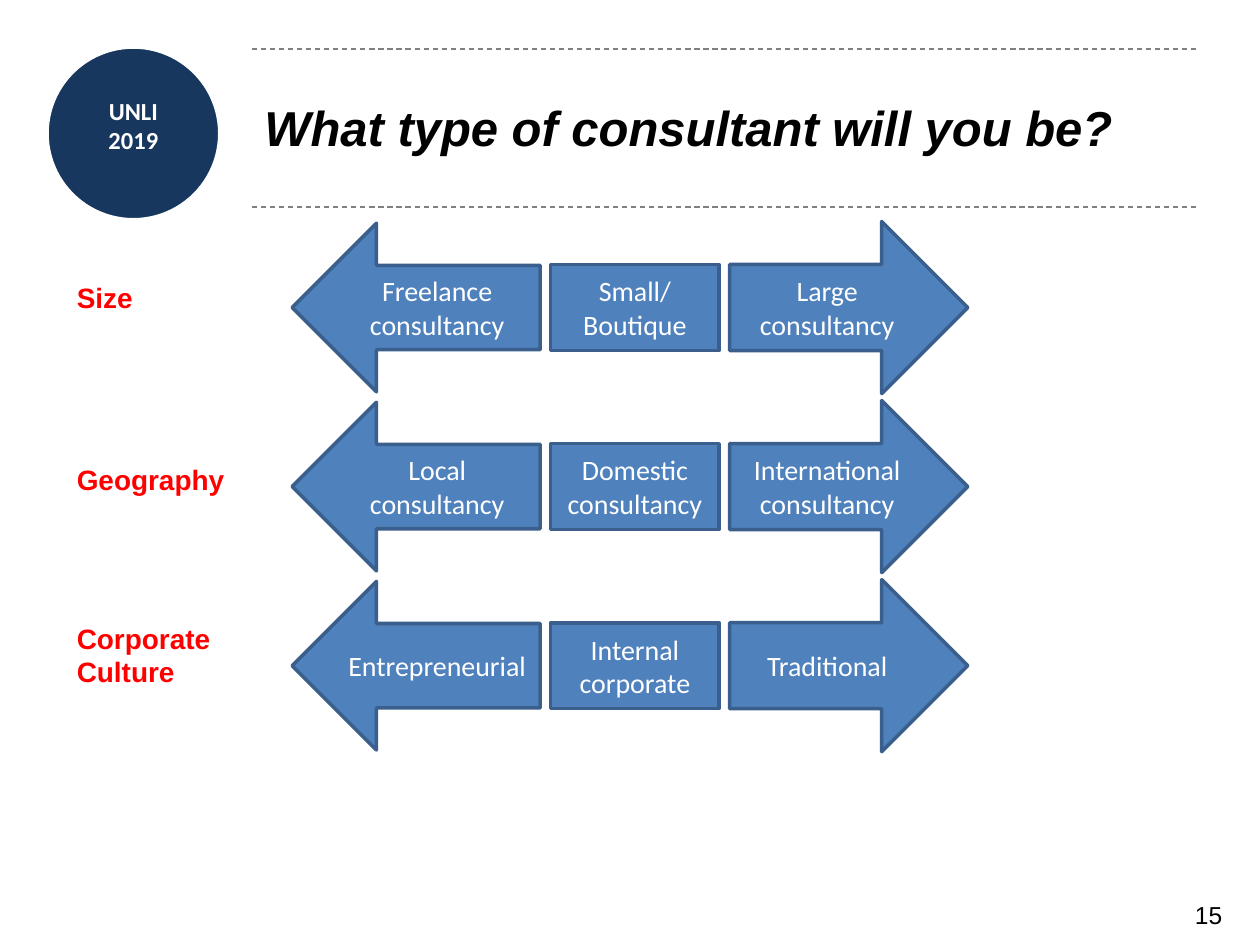
from lxml.etree import SubElement
from pptx import Presentation
from pptx.dml.color import RGBColor
from pptx.enum.dml import MSO_LINE
from pptx.enum.shapes import MSO_CONNECTOR, MSO_SHAPE
from pptx.enum.text import MSO_ANCHOR, MSO_AUTO_SIZE, PP_ALIGN
from pptx.oxml.ns import qn
from pptx.util import Cm, Pt

ROW_PITCH = 3.61
FIRST_ROW_MIDDLE = 6.2
# shape, left, width, height of each column
COLUMNS = [
    (MSO_SHAPE.LEFT_ARROW, 5.89, 5, 3.4),
    (MSO_SHAPE.RECTANGLE, 11.1, 3.4, 1.73),
    (MSO_SHAPE.RIGHT_ARROW, 14.71, 4.8, 3.47),
]
# label, label top, label width, label height, texts from left to right
ROWS = [
    ("Size", 5.54, 2.79, 0.94,
     ["Freelance consultancy", "Small/ Boutique", "Large consultancy"]),
    ("Geography", 9.19, 3.61, 0.94,
     ["Local consultancy", "Domestic\nconsultancy", "International consultancy"]),
    ("Corporate Culture", 12.4, 3.61, 1.63,
     ["Entrepreneurial", "Internal corporate", "Traditional"]),
]


def color(value):
    return RGBColor.from_string(value)


def write(tf, text, size=16, font="Arial", fill="000000", bold=False,
          italic=False, align=PP_ALIGN.LEFT, anchor=MSO_ANCHOR.TOP):
    """Put text in a frame, one paragraph for each line."""
    tf.word_wrap = True
    tf.vertical_anchor = anchor
    for i, line in enumerate(text.split("\n")):
        p = tf.add_paragraph() if i else tf.paragraphs[0]
        p.alignment = align
        r = p.add_run()
        r.text = line
        r.font.size = Pt(size)
        r.font.name = font
        r.font.bold = bold
        r.font.italic = italic
        r.font.color.rgb = color(fill)


class Canvas:
    body_font = "Calibri"
    fill = "4F81BD"
    outline = "3A5F8C"

    def __init__(self, s):
        self.s = s

    def shape(self, kind, x, y, w, h, text="", fill=fill, line=outline, weight=2):
        sp = self.s.shapes.add_shape(kind, Cm(x), Cm(y), Cm(w), Cm(h))
        sp.shadow.inherit = False
        sp.fill.solid()
        sp.fill.fore_color.rgb = color(fill)
        sp.line.color.rgb = color(line)
        sp.line.width = Pt(weight)
        if text:
            write(sp.text_frame, text, font=self.body_font, fill="FFFFFF",
                  align=PP_ALIGN.CENTER, anchor=MSO_ANCHOR.MIDDLE)

    def text(self, text, x, y, w, h, inset=True, grow=False, **style):
        tf = self.s.shapes.add_textbox(Cm(x), Cm(y), Cm(w), Cm(h)).text_frame
        if not inset:
            tf.margin_left = tf.margin_right = tf.margin_top = tf.margin_bottom = 0
        if grow:
            tf.auto_size = MSO_AUTO_SIZE.SHAPE_TO_FIT_TEXT
        write(tf, text, **style)

    def dashed_rule(self, x1, x2, y):
        line = self.s.shapes.add_connector(
            MSO_CONNECTOR.STRAIGHT, Cm(x1), Cm(y), Cm(x2), Cm(y))
        line.line.color.rgb = color("808080")
        line.line.width = Pt(0.75)
        line.line.dash_style = MSO_LINE.DASH
        SubElement(line._element.spPr, qn("a:effectLst"))


def main():
    prs = Presentation()
    prs.slide_width, prs.slide_height = Cm(25.4), Cm(19.05)
    canvas = Canvas(prs.slides.add_slide(prs.slide_layouts[6]))

    canvas.shape(MSO_SHAPE.OVAL, 0.94, 0.94, 3.5, 3.5,
                 fill="17375E", line="FFFFFF", weight=2.5)
    canvas.text("UNLI\n2019", 1.09, 1.93, 3.2, 1.2, inset=False, grow=True, size=14,
                font=canvas.body_font, fill="FFFFFF", bold=True, align=PP_ALIGN.CENTER)
    canvas.text("15", 21.51, 18.01, 3.38, 1.04, size=14, align=PP_ALIGN.RIGHT)
    for y in (0.99, 4.17):
        canvas.dashed_rule(5.08, 24.13, y)
    canvas.text("What type of consultant will you be?", 5.08, 0.97, 19.05, 3.18,
                size=28, bold=True, italic=True, anchor=MSO_ANCHOR.MIDDLE)

    for i, (label, top, width, height, texts) in enumerate(ROWS):
        middle = FIRST_ROW_MIDDLE + i * ROW_PITCH
        canvas.text(label, 1.3, top, width, height, grow=True, fill="FF0000", bold=True)
        for (kind, x, w, h), text in zip(COLUMNS, texts):
            canvas.shape(kind, x, middle - h / 2, w, h, text)

    prs.save("out.pptx")


if __name__ == "__main__":
    main()
